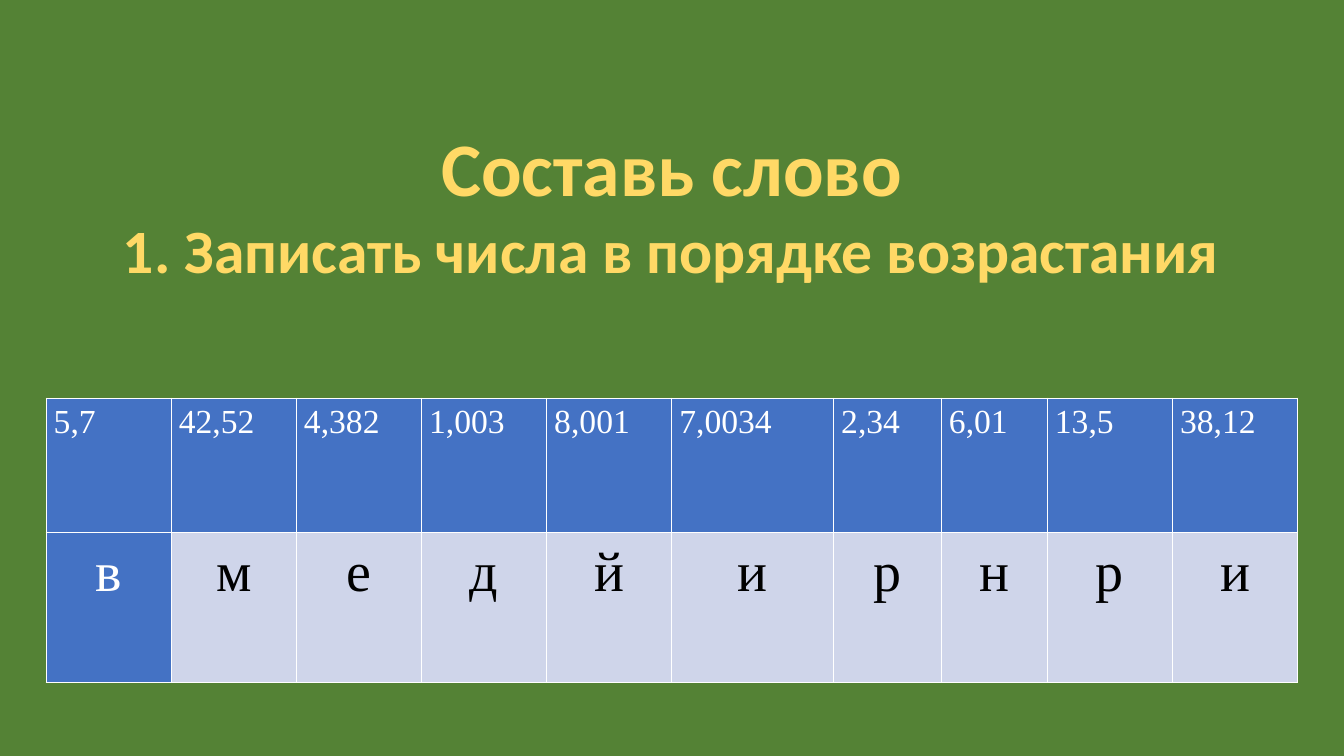
from lxml import etree
from pptx import Presentation
from pptx import util as u
from pptx.dml import color
from pptx.enum import text
from pptx.oxml import ns

COLORS = {
    "background": "548235",
    "title": "FFD966",
    "header": "4472C4",
    "letter": "CFD5EA",
    "white": "FFFFFF",
    "black": "000000",
}
NUMBERS = ["5,7", "42,52", "4,382", "1,003", "8,001",
           "7,0034", "2,34", "6,01", "13,5", "38,12"]
LETTERS = "вмедйирнри"
COLUMN_WIDTHS = [89.4] * 5 + [115.6, 77, 75.7] + [89.4] * 2
ROW_HEIGHTS = [95.8, 107.2]


def rgb(name):
    return color.RGBColor.from_string(COLORS[name])


def write(para, content, *, size, shade, font, bold=False,
          align=text.PP_ALIGN.LEFT, spacing=1.0, after=0):
    para.alignment = align
    para.line_spacing = spacing
    para.space_before = u.Pt(0)
    para.space_after = u.Pt(after)
    span = para.add_run()
    span.text = content
    span.font.name = font
    span.font.size = u.Pt(size)
    span.font.bold = bold
    span.font.color.rgb = rgb(shade)


def add_borders(cell):
    properties = cell._tc.get_or_add_tcPr()
    for side in ("lnL", "lnR", "lnT", "lnB"):
        line = etree.SubElement(properties, ns.qn(f"a:{side}"), w=str(u.Pt(1)))
        fill = etree.SubElement(line, ns.qn("a:solidFill"))
        etree.SubElement(fill, ns.qn("a:srgbClr"), val=COLORS["white"])


def fill_cell(cell, content, background, **style):
    add_borders(cell)
    cell.fill.solid()
    cell.fill.fore_color.rgb = rgb(background)
    cell.margin_left = cell.margin_right = u.Pt(5.4)
    cell.margin_top = cell.margin_bottom = 0
    write(cell.text_frame.paragraphs[0], content, font="Times New Roman",
          spacing=1.15, after=10, **style)


def add_title(page):
    box = page.shapes.title
    box.left, box.top = u.Pt(77), u.Pt(82.8)
    box.width, box.height = u.Pt(805.7), u.Pt(126)
    frame = box.text_frame
    frame.word_wrap = False
    frame.auto_size = text.MSO_AUTO_SIZE.NONE
    frame.vertical_anchor = text.MSO_ANCHOR.TOP
    style = dict(shade="title", font="Calibri", bold=True,
                 align=text.PP_ALIGN.CENTER)
    write(frame.paragraphs[0], "Составь слово", size=54, **style)
    write(frame.add_paragraph(), "1. Записать числа в порядке возрастания",
          size=44, **style)


def add_number_table(page):
    table = page.shapes.add_table(
        2, len(NUMBERS), u.Pt(33), u.Pt(284.4),
        u.Pt(sum(COLUMN_WIDTHS)), u.Pt(sum(ROW_HEIGHTS))).table
    for row, height in zip(table.rows, ROW_HEIGHTS):
        row.height = u.Pt(height)
    for index, width in enumerate(COLUMN_WIDTHS):
        table.columns[index].width = u.Pt(width)
        fill_cell(table.cell(0, index), NUMBERS[index], "header",
                  size=24, shade="white")
        first = index == 0
        fill_cell(table.cell(1, index), LETTERS[index],
                  "header" if first else "letter", size=40,
                  shade="white" if first else "black",
                  align=text.PP_ALIGN.CENTER)


def main():
    deck = Presentation()
    deck.slide_width, deck.slide_height = u.Pt(960), u.Pt(540)
    page = deck.slides.add_slide(deck.slide_layouts[5])
    page.background.fill.solid()
    page.background.fill.fore_color.rgb = rgb("background")
    add_number_table(page)
    add_title(page)
    deck.save("out.pptx")


if __name__ == "__main__":
    main()
